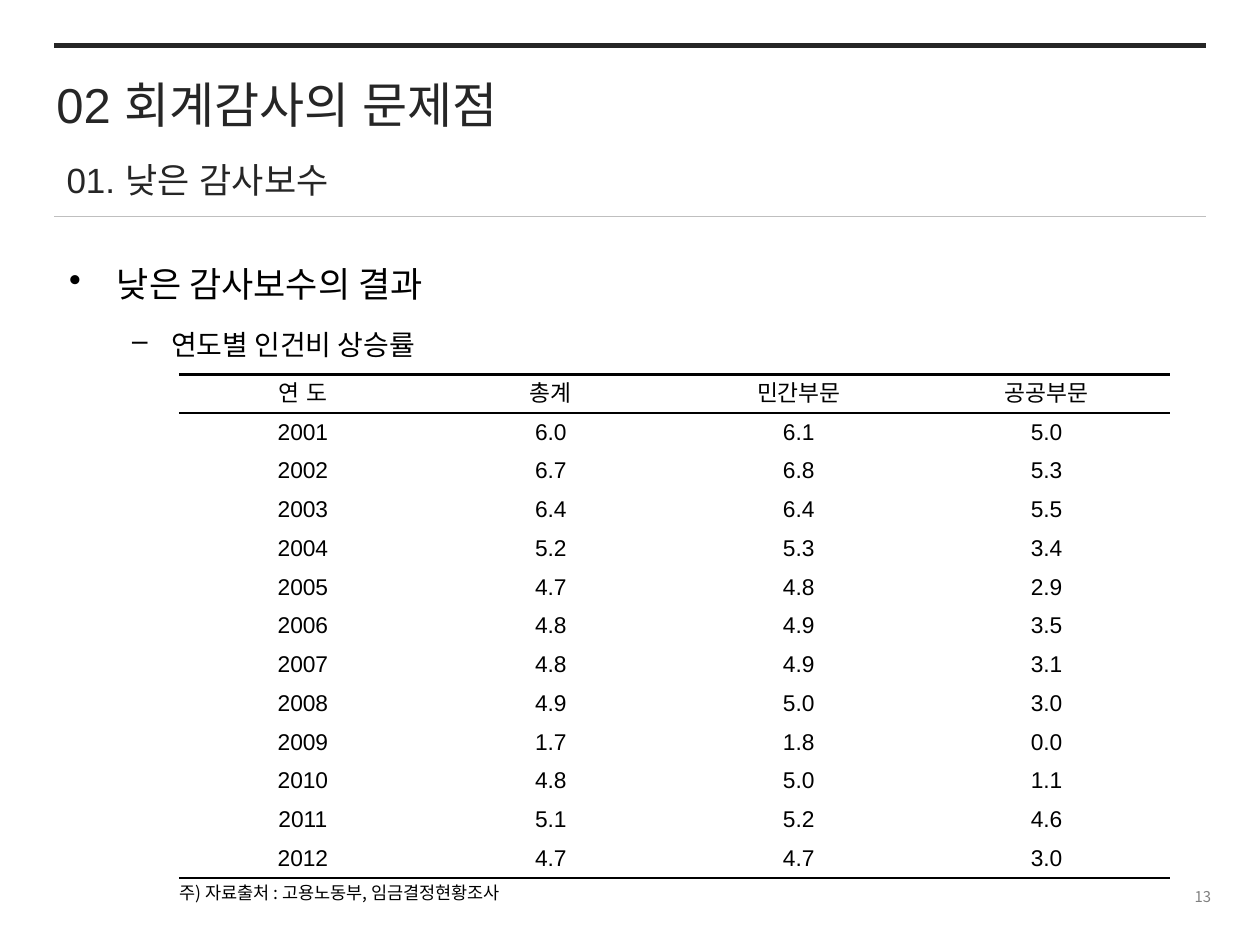
from lxml import etree
from pptx import Presentation
from pptx.dml.color import RGBColor
from pptx.enum import shapes, text
from pptx.oxml import ns
from pptx.util import Inches, Pt

BLACK = RGBColor(0x00, 0x00, 0x00)
CHARCOAL = RGBColor(0x26, 0x26, 0x26)
GRAY = RGBColor(0x80, 0x80, 0x80)
SILVER = RGBColor(0xBF, 0xBF, 0xBF)
LATIN, KOREAN = "Arial", "Noto Sans CJK KR"
NO_TABLE_STYLE = "{2D5ABB26-0587-4C30-8999-92F81FD0307C}"

# text, (left, top, width, height), size, font, colour
TITLE = ("02 회계감사의 문제점", (0.35, 0.54, 7.56, 0.57), 28, LATIN, CHARCOAL)
SUBTITLE = ("01. 낮은 감사보수", (0.43, 1.32, 7.56, 0.33), 20, LATIN, CHARCOAL)
SOURCE_NOTE = ("주) 자료출처 : 고용노동부, 임금결정현황조사",
               (1.33, 6.95, 5.2, 0.27), 10, KOREAN, BLACK)
PAGE_NUMBER = ("13", (7.6, 6.98, 2.11, 0.27), 8.5, KOREAN, GRAY)

# y, colour, width in points
RULES = [(1.72, SILVER, 0.75), (0.36, CHARCOAL, 3)]
RULE_LEFT, RULE_RIGHT = 0.43, 9.57

# text, bullet, size, left margin, hanging indent, alignment
OUTLINE = [
    ("낮은 감사보수의 결과", "•", 20, 0.38, 0.38, text.PP_ALIGN.LEFT),
    ("연도별 인건비 상승률", "–", 16, 0.81, 0.31, text.PP_ALIGN.JUSTIFY),
]
OUTLINE_BOX = (0.45, 1.87, 9.06, 5.16)

WAGE_GROWTH = [
    ("연 도", "총계", "민간부문", "공공부문"),
    ("2001", "6.0", "6.1", "5.0"),
    ("2002", "6.7", "6.8", "5.3"),
    ("2003", "6.4", "6.4", "5.5"),
    ("2004", "5.2", "5.3", "3.4"),
    ("2005", "4.7", "4.8", "2.9"),
    ("2006", "4.8", "4.9", "3.5"),
    ("2007", "4.8", "4.9", "3.1"),
    ("2008", "4.9", "5.0", "3.0"),
    ("2009", "1.7", "1.8", "0.0"),
    ("2010", "4.8", "5.0", "1.1"),
    ("2011", "5.1", "5.2", "4.6"),
    ("2012", "4.7", "4.7", "3.0"),
]
TABLE_BOX = (1.42, 2.97, 7.87, 4)
CELL_PADDING = 0.02


def set_font(paragraph, size, name, color):
    """Use one typeface for Latin and Korean letters alike."""
    font = paragraph.font
    font.size, font.name, font.color.rgb = Pt(size), name, color
    for run in paragraph.runs:
        east_asian = etree.SubElement(run.font._element, ns.qn("a:ea"))
        east_asian.set("typeface", name)


def add_frame(slide, box):
    frame = slide.shapes.add_textbox(*map(Inches, box)).text_frame
    frame.word_wrap = True
    return frame


def add_label(slide, words, box, size, font, color):
    frame = add_frame(slide, box)
    paragraph = frame.paragraphs[0]
    paragraph.text = words
    set_font(paragraph, size, font, color)
    return frame


def add_rule(slide, y, color, width):
    rule = slide.shapes.add_connector(
        shapes.MSO_CONNECTOR.STRAIGHT,
        Inches(RULE_LEFT), Inches(y), Inches(RULE_RIGHT), Inches(y))
    rule.line.color.rgb, rule.line.width = color, Pt(width)
    etree.SubElement(rule._element.spPr, ns.qn("a:effectLst"))


def add_outline(slide):
    frame = add_frame(slide, OUTLINE_BOX)
    for level, (words, bullet, size, margin, hanging, align) in enumerate(OUTLINE):
        paragraph = frame.add_paragraph() if level else frame.paragraphs[0]
        paragraph.text, paragraph.level, paragraph.alignment = words, level, align
        paragraph.line_spacing, paragraph.space_before = 1.5, Pt(size * 0.2)
        set_font(paragraph, size, KOREAN, BLACK)
        properties = paragraph._p.get_or_add_pPr()
        properties.set("marL", str(Inches(margin)))
        properties.set("indent", str(-Inches(hanging)))
        mark = etree.Element(ns.qn("a:buChar"), char=bullet)
        properties.find(ns.qn("a:defRPr")).addprevious(mark)


def set_borders(cell, top, bottom):
    """Draw the wanted edges and clear the others; set the fill afterwards."""
    properties = cell._tc.get_or_add_tcPr()
    edges = (("a:lnL", False), ("a:lnR", False), ("a:lnT", top), ("a:lnB", bottom))
    for tag, wanted in edges:
        edge = etree.SubElement(properties, ns.qn(tag))
        if wanted:
            edge.set("w", str(Pt(1.7)))
            fill = etree.SubElement(edge, ns.qn("a:solidFill"))
            etree.SubElement(fill, ns.qn("a:srgbClr"), val=str(BLACK))
        else:
            etree.SubElement(edge, ns.qn("a:noFill"))


def add_wage_table(slide):
    row_count, column_count = len(WAGE_GROWTH), len(WAGE_GROWTH[0])
    table = slide.shapes.add_table(
        row_count, column_count, *map(Inches, TABLE_BOX)).table
    table.first_row = table.horz_banding = False
    table._tbl.tblPr.find(ns.qn("a:tableStyleId")).text = NO_TABLE_STYLE
    for r, values in enumerate(WAGE_GROWTH):
        for c, value in enumerate(values):
            cell = table.cell(r, c)
            cell.text = value
            cell.vertical_anchor = text.MSO_ANCHOR.MIDDLE
            cell.margin_top = cell.margin_bottom = Inches(CELL_PADDING)
            set_borders(cell, top=r <= 1, bottom=r in (0, row_count - 1))
            cell.fill.background()
            paragraph = cell.text_frame.paragraphs[0]
            paragraph.alignment = text.PP_ALIGN.CENTER
            set_font(paragraph, 13, LATIN, BLACK)


def main():
    deck = Presentation()
    deck.slide_width, deck.slide_height = Inches(10), Inches(7.5)
    slide = deck.slides.add_slide(deck.slide_layouts[6])

    page_number = add_label(slide, *PAGE_NUMBER)
    page_number.vertical_anchor = text.MSO_ANCHOR.MIDDLE
    page_number.paragraphs[0].alignment = text.PP_ALIGN.RIGHT
    add_label(slide, *TITLE)
    add_label(slide, *SUBTITLE).paragraphs[0].line_spacing = Pt(16)
    for rule in RULES:
        add_rule(slide, *rule)
    add_outline(slide)
    add_wage_table(slide)
    add_label(slide, *SOURCE_NOTE)
    deck.save("out.pptx")


if __name__ == "__main__":
    main()
